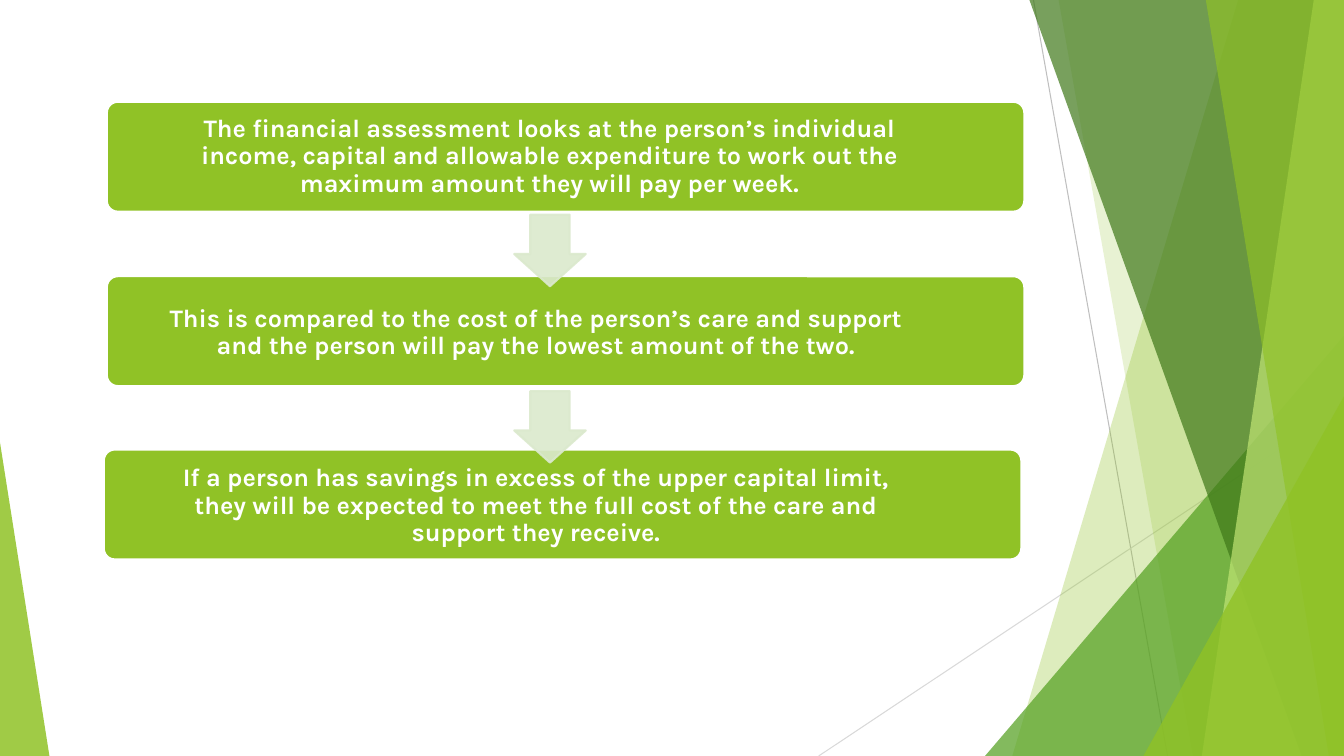
from lxml.etree import SubElement
from pptx import Presentation
from pptx.dml.color import RGBColor
from pptx.enum.shapes import MSO_CONNECTOR, MSO_SHAPE
from pptx.enum.text import MSO_ANCHOR, PP_ALIGN
from pptx.oxml.ns import qn
from pptx.util import Inches, Pt

COLORS = {
    "lime": "90C226",
    "green": "54A021",
    "forest": "3F7819",
    "pale": "C0E474",
    "arrow": "DBE9CD",
    "white": "FFFFFF",
    "gray": "BFBFBF",
    "light_gray": "D9D9D9",
}
FONT = "Karla"
SLIDE_W, SLIDE_H = 13.33, 7.5


def rgb(name):
    return RGBColor.from_string(COLORS[name])


def set_alpha(fill_element, opacity):
    color = fill_element.find(".//" + qn("a:srgbClr"))
    SubElement(color, qn("a:alpha")).set("val", str(opacity * 1000))


def paint(sp, color, opacity=100, line=None):
    sp.shadow.inherit = False
    sp.fill.solid()
    sp.fill.fore_color.rgb = rgb(color)
    if opacity < 100:
        set_alpha(sp._element.spPr.find(qn("a:solidFill")), opacity)
    if line is None:
        sp.line.fill.background()
        return
    sp.line.color.rgb = rgb(line)
    sp.line.width = Pt(1.5)
    if opacity < 100:
        set_alpha(sp._element.spPr.find(qn("a:ln")), opacity)


def add_preset(s, kind, box, adjustments):
    sp = s.shapes.add_shape(kind, *map(Inches, box))
    for i, value in enumerate(adjustments):
        sp.adjustments[i] = value
    return sp


def add_thin_line(s, start, end, color):
    line = s.shapes.add_connector(
        MSO_CONNECTOR.STRAIGHT, *map(Inches, (*start, *end)))
    line.line.color.rgb = rgb(color)
    line.line.width = Pt(0.75)
    SubElement(line._element.spPr, qn("a:effectLst"))


def add_band(s, top_x, bottom_x, right, height, color, opacity):
    points = [(Inches(x), Inches(y)) for x, y in (
        (top_x, 0), (right, 0), (right, height), (bottom_x, height))]
    builder = s.shapes.build_freeform(*points[0])
    builder.add_line_segments(points[1:], close=True)
    paint(builder.convert_to_shape(), color, opacity)


def add_corner(s, left, top, right, bottom, apex, color, opacity):
    box = (left, top, right - left, bottom - top)
    sp = add_preset(s, MSO_SHAPE.ISOSCELES_TRIANGLE, box, [apex])
    paint(sp, color, opacity)


def add_backdrop(s, w, h):
    add_thin_line(s, (w - 3.08, 0), (w - 1.75, h), "gray")
    add_thin_line(s, (w, h - 3.47), (w - 5.21, h), "light_gray")
    add_band(s, w - 1.05, w - 3.29, w, h, "lime", 30)
    add_band(s, w - 2.83, w - 1.5, w, h, "lime", 20)
    add_corner(s, w - 3.56, h - 4.17, w, h, 1, "green", 72)
    add_band(s, w - 3.12, w - 0.42, w, h, "forest", 70)
    add_band(s, w - 0.3, w - 1.41, w, h, "pale", 70)
    add_band(s, w - 1.37, w - 0.15, w, h, "lime", 65)
    add_corner(s, w - 1.99, h - 3.57, w, h, 1, "lime", 80)
    add_corner(s, 0, h - 3.11, 0.49, h, 0, "lime", 85)


def add_step(s, x, y, w, h, text, text_box, bottom_inset=0.07):
    card = add_preset(s, MSO_SHAPE.ROUNDED_RECTANGLE, (x, y, w, h), [0.1])
    paint(card, "lime", line="white")

    dx, dy, text_w, text_h = text_box
    tb = s.shapes.add_textbox(
        *map(Inches, (x + dx, y + dy, text_w, text_h)))
    tf = tb.text_frame
    tf.word_wrap = True
    tf.vertical_anchor = MSO_ANCHOR.MIDDLE
    tf.margin_left = tf.margin_right = tf.margin_top = Inches(0.07)
    tf.margin_bottom = Inches(bottom_inset)
    p = tf.paragraphs[0]
    p.alignment = PP_ALIGN.CENTER
    p.line_spacing = 0.9
    r = p.add_run()
    r.text = text
    r.font.name = FONT
    r.font.size = Pt(18)
    r.font.bold = True
    r.font.color.rgb = rgb("white")


def add_flow(s, x, y, w):
    card_h, arrow_size = 1.09, 0.71
    steps = [
        (0.03, 0, (0.47, 0.03, 7.84, 1.03), 0.07,
         "The financial assessment looks at the person’s individual income, "
         "capital and allowable expenditure to work out the maximum amount "
         "they will pay per week."),
        (0.03, 1.73, (0.47, 0.05, 7.57, 1.03), 0.07,
         "This is compared to the cost of the person’s care and support and "
         "the person will pay the lowest amount of the two."),
        (0, 3.45, (0.5, 0.17, 7.57, 1.03), 0.32,
         "If a person has savings in excess of the upper capital limit, they "
         "will be expected to meet the full cost of the care and support "
         "they receive."),
    ]
    for dx, dy, text_box, inset, text in steps:
        add_step(s, x + dx, y + dy, w, card_h, text, text_box, inset)
    for dy in (1.12, 2.87):
        box = (x + 4.07, y + dy, arrow_size, arrow_size)
        arrow = add_preset(s, MSO_SHAPE.DOWN_ARROW, box, [0.55, 0.45])
        paint(arrow, "arrow", 90, line="arrow")
        # adjustments order follows the preset definition


def main():
    prs = Presentation()
    prs.slide_width, prs.slide_height = Inches(SLIDE_W), Inches(SLIDE_H)
    s = prs.slides.add_slide(prs.slide_layouts[6])
    add_backdrop(s, SLIDE_W, SLIDE_H)
    add_flow(s, 1.03, 1.01, 9.1)
    prs.save("out.pptx")


if __name__ == "__main__":
    main()
